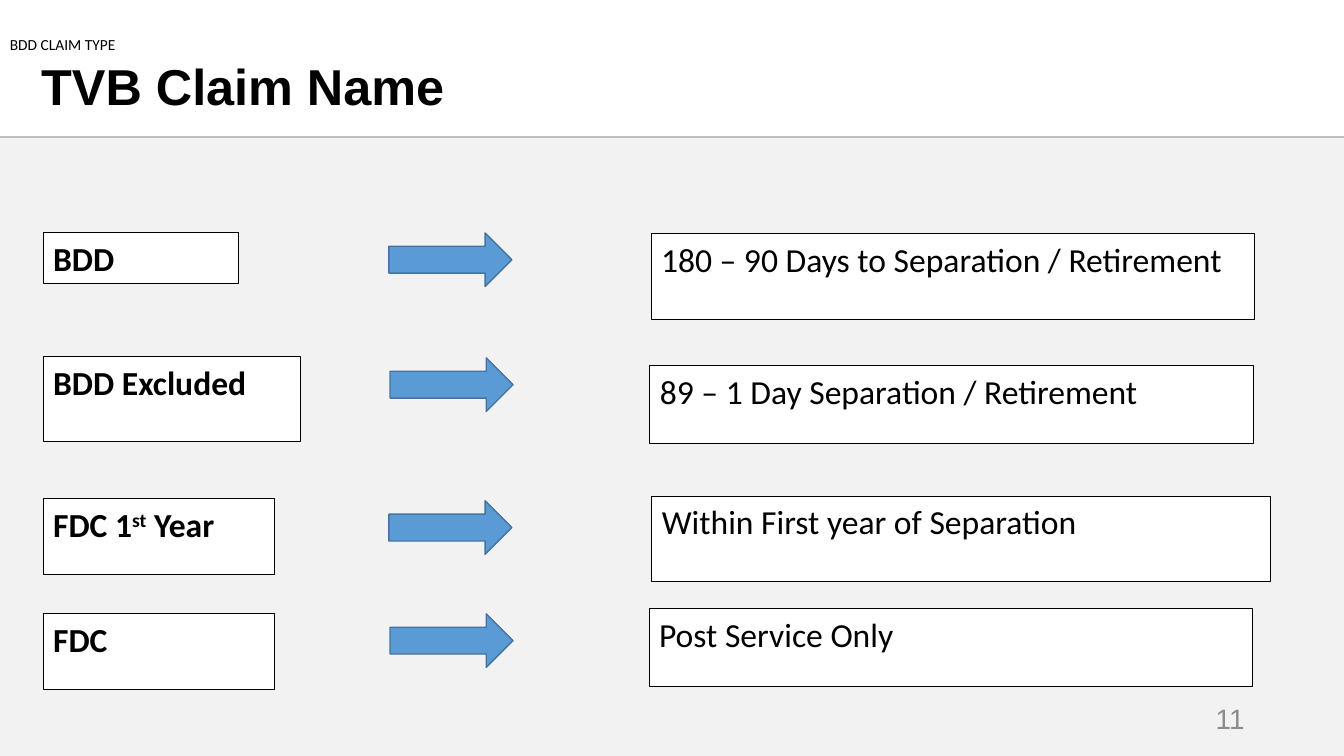
"""Build the slide that matches each TVB claim name to its time window."""
import pptx
import pptx.dml.color
import pptx.enum.shapes
import pptx.enum.text
import pptx.oxml.ns
import pptx.util
from lxml import etree

Cm, Pt = pptx.util.Cm, pptx.util.Pt
SHAPE = pptx.enum.shapes.MSO_SHAPE
ANCHOR = pptx.enum.text.MSO_ANCHOR
ALIGN = pptx.enum.text.PP_ALIGN

HEADING = "TVB Claim Name"
CLAIM_TYPE = "BDD CLAIM TYPE"
PAGE_NUMBER = "11"
CLAIMS = [
    {"name": ["BDD"], "name_at": (5.87, 4.93, 1.27), "arrow_at": (9.8, 5.87),
     "window": "180 – 90 Days to Separation / Retirement", "window_at": (16.41, 5.89, 15.21, 2.16)},
    {"name": ["BDD Excluded"], "name_at": (8.99, 6.48, 2.13), "arrow_at": (9.83, 9.02),
     "window": "89 – 1 Day Separation / Retirement", "window_at": (16.38, 9.22, 15.21, 1.96)},
    {"name": ["FDC 1", "st", " Year"], "name_at": (12.57, 5.84, 1.91), "arrow_at": (9.8, 12.62),
     "window": "Within First year of Separation", "window_at": (16.43, 12.5, 15.6, 2.16)},
    {"name": ["FDC"], "name_at": (15.47, 5.84, 1.91), "arrow_at": (9.83, 15.47),
     "window": "Post Service Only", "window_at": (16.36, 15.34, 15.21, 1.96)},
]
THEME = {
    "panel": "F2F2F2", "rule": "BFBFBF", "box": "FFFFFF", "box_line": "000000",
    "arrow": "5B9BD5", "arrow_line": "43739E",
    "heading": {"name": "Arial", "size": Pt(36), "bold": True, "color": "000000"},
    "claim_type": {"name": "Calibri", "size": Pt(11), "bold": False, "color": "000000"},
    "claim": {"name": "Calibri", "size": Pt(24), "bold": True, "color": "000000"},
    "window": {"name": "Calibri", "size": Pt(24), "bold": False, "color": "000000"},
    "page": {"name": "Arial", "size": Pt(20), "bold": False, "color": "8C8C8C"},
}
WIDTH, HEIGHT = 33.87, 19.05
RULE_Y, PANEL_Y = 3.45, 3.48
NAME_X = 1.09
ARROW_SIZE = (3.1, 1.35)


def rgb(code):
    return pptx.dml.color.RGBColor.from_string(code)


def write(frame, pieces, style, anchor=ANCHOR.TOP, align=ALIGN.LEFT):
    frame.word_wrap = True
    frame.vertical_anchor = anchor
    paragraph = frame.paragraphs[0]
    paragraph.alignment = align
    for position, piece in enumerate(pieces):
        run = paragraph.add_run()
        run.text = piece
        for key, value in style.items():
            if key == "color":
                run.font.color.rgb = rgb(value)
            else:
                setattr(run.font, key, value)
        if position % 2:
            run.font._element.set("baseline", "30000")
    return paragraph


def add_figure(slide, kind, place, fill, line=None, weight=0.75):
    figure = slide.shapes.add_shape(kind, *map(Cm, place))
    figure.shadow.inherit = False
    figure.fill.solid()
    figure.fill.fore_color.rgb = rgb(fill)
    if line:
        figure.line.color.rgb = rgb(line)
        figure.line.width = Pt(weight)
    else:
        figure.line.fill.background()
    return figure


def add_label(slide, place, text, style, align=ALIGN.LEFT):
    label = slide.shapes.add_textbox(*map(Cm, place))
    return write(label.text_frame, [text], THEME[style], ANCHOR.MIDDLE, align)


def add_rule(slide):
    rule = slide.shapes.add_connector(
        pptx.enum.shapes.MSO_CONNECTOR.STRAIGHT, Cm(0), Cm(RULE_Y), Cm(WIDTH), Cm(RULE_Y))
    rule.line.color.rgb = rgb(THEME["rule"])
    rule.line.width = Pt(1.5)
    etree.SubElement(rule._element.spPr, pptx.oxml.ns.qn("a:effectLst"))


def add_claim(slide, claim):
    boxes = [
        ((NAME_X, *claim["name_at"]), claim["name"], "claim"),
        (claim["window_at"], [claim["window"]], "window"),
    ]
    for place, pieces, style in boxes:
        box = add_figure(slide, SHAPE.RECTANGLE, place, THEME["box"], THEME["box_line"])
        write(box.text_frame, pieces, THEME[style])
    add_figure(slide, SHAPE.RIGHT_ARROW, (*claim["arrow_at"], *ARROW_SIZE),
               THEME["arrow"], THEME["arrow_line"], 1)


def main():
    deck = pptx.Presentation()
    deck.slide_width, deck.slide_height = Cm(WIDTH), Cm(HEIGHT)
    slide = deck.slides.add_slide(deck.slide_layouts[6])
    add_figure(slide, SHAPE.RECTANGLE, (0, PANEL_Y, WIDTH, HEIGHT - PANEL_Y), THEME["panel"])
    add_rule(slide)
    add_label(slide, (24, 17.6, 7.62, 1.02), PAGE_NUMBER, "page", ALIGN.RIGHT)
    heading = add_label(slide, (0.79, 0.79, 23.5, 2.9), HEADING, "heading")
    heading.line_spacing = 0.9
    add_label(slide, (0, 0.76, 6, 0.74), CLAIM_TYPE, "claim_type")
    for claim in CLAIMS:
        add_claim(slide, claim)
    deck.save("out.pptx")


if __name__ == "__main__":
    main()
